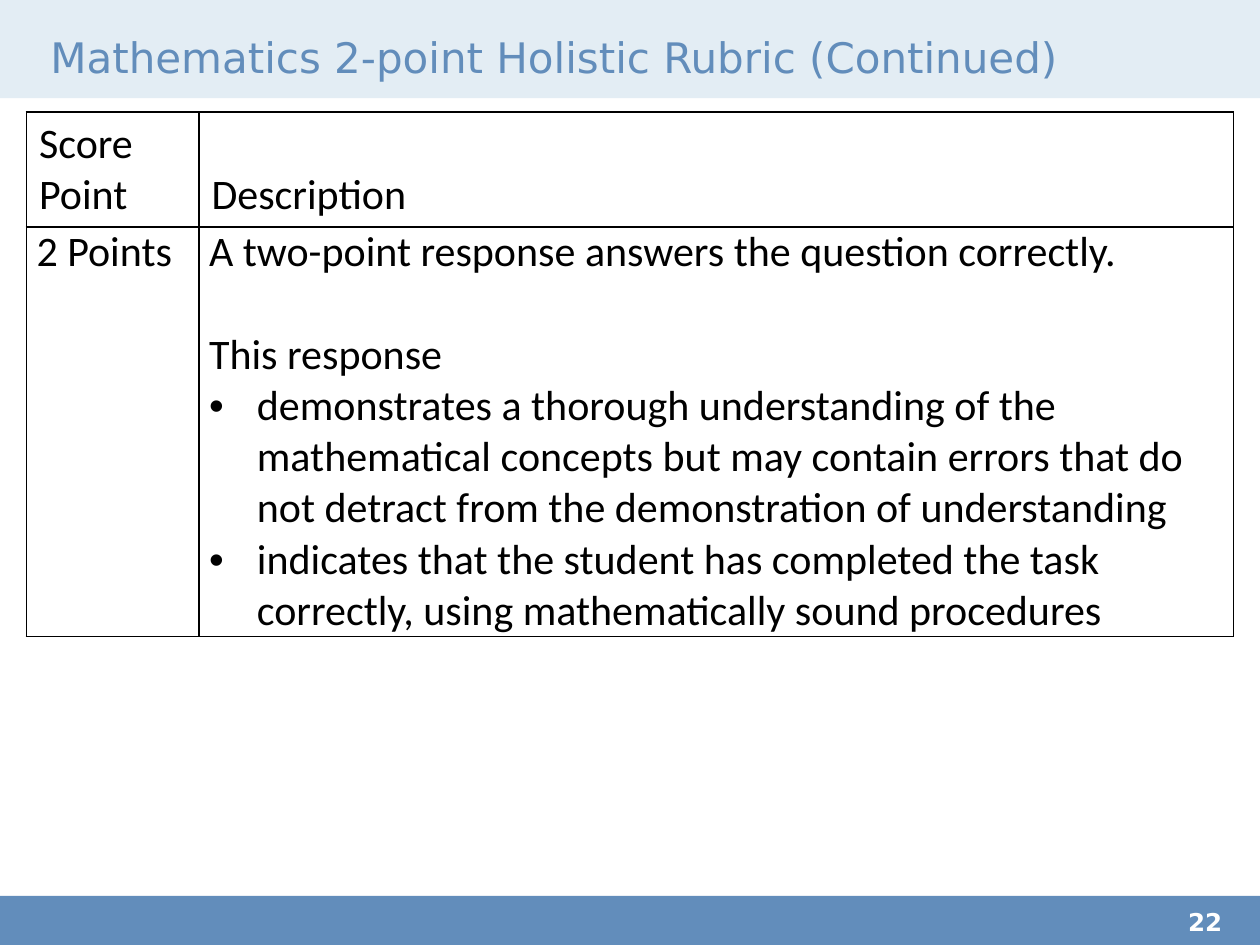
from dataclasses import dataclass

from pptx import Presentation
from pptx import util as u
from pptx.dml.color import RGBColor
from pptx.enum import shapes, text
from pptx.oxml import parse_xml
from pptx.oxml.ns import nsdecls

BLUE, PALE, WHITE, BLACK = "628DBB", "E3EDF4", "FFFFFF", "000000"
TITLE_FONT, BODY_FONT = "DejaVu Sans", "Calibri"


@dataclass
class Para:
    text: str
    before: float = 0
    after: float = 0
    bullet: bool = False


@dataclass
class Cell:
    paras: list[Para]
    header: bool = False


ROWS = [
    [Cell([Para("Score Point")], header=True),
     Cell([Para("Description")], header=True)],
    [Cell([Para("2 Points", after=6)]),
     Cell([
         Para("A two-point response answers the question correctly."),
         Para("This response", before=29.3),
         Para("demonstrates a thorough understanding of the mathematical "
              "concepts but may contain errors that do not detract from the "
              "demonstration of understanding", bullet=True),
         Para("indicates that the student has completed the task correctly, "
              "using mathematically sound procedures", bullet=True),
     ])],
]
COL_WIDTHS = [1.37, 8.21]
ROW_HEIGHTS = [0.91, 3.25]


def rgb(color: str) -> RGBColor:
    return RGBColor.from_string(color)


def write(p, content: str, *, font: str = BODY_FONT, size: float = 24,
          color: str = BLACK, bold: bool = False) -> None:
    r = p.add_run()
    r.text = content
    r.font.name, r.font.size, r.font.bold = font, u.Pt(size), bold
    r.font.color.rgb = rgb(color)


def add_band(s, top: float, height: float, color: str) -> None:
    sp = s.shapes.add_shape(shapes.MSO_SHAPE.RECTANGLE, 0, u.Inches(top),
                            u.Inches(10), u.Inches(height))
    sp.shadow.inherit = False
    sp.fill.solid()
    sp.fill.fore_color.rgb = rgb(color)
    sp.line.fill.background()


def add_label(s, content: str, box: tuple[float, ...], anchor, **fmt) -> None:
    tf = s.shapes.add_textbox(*map(u.Inches, box)).text_frame
    tf.word_wrap = True
    tf.vertical_anchor = anchor
    tf.margin_left = tf.margin_top = tf.margin_right = tf.margin_bottom = 0
    write(tf.paragraphs[0], content, **fmt)


def add_bullet(p) -> None:
    pPr = p._p.get_or_add_pPr()
    indent = u.Inches(0.38)
    pPr.set("marL", str(indent))
    pPr.set("indent", str(-indent))
    for xml in (f'<a:buFont {nsdecls("a")} typeface="Arial"/>',
                f'<a:buChar {nsdecls("a")} char="•"/>',
                f'<a:tabLst {nsdecls("a")}>'
                f'<a:tab pos="{u.Inches(0.5)}" algn="l"/></a:tabLst>'):
        pPr.append(parse_xml(xml))


def add_borders(cell, color: str, width: float) -> None:
    for side in "LRTB":
        cell._tc.get_or_add_tcPr().append(parse_xml(
            f'<a:ln{side} {nsdecls("a")} w="{u.Pt(width)}"><a:solidFill>'
            f'<a:srgbClr val="{color}"/></a:solidFill></a:ln{side}>'))


def fill_cell(cell, content: Cell) -> None:
    add_borders(cell, BLACK, 1)
    cell.fill.background()
    side, end = (0.1, 0.05) if content.header else (0.08, 0)
    cell.margin_left = cell.margin_right = u.Inches(side)
    cell.margin_top = cell.margin_bottom = u.Inches(end)
    cell.vertical_anchor = (text.MSO_ANCHOR.BOTTOM if content.header
                            else text.MSO_ANCHOR.TOP)
    tf = cell.text_frame
    for i, para in enumerate(content.paras):
        p = tf.add_paragraph() if i else tf.paragraphs[0]
        if para.bullet:
            add_bullet(p)
        p.space_before, p.space_after = u.Pt(para.before), u.Pt(para.after)
        write(p, para.text)


def add_rubric(s) -> None:
    table = s.shapes.add_table(
        len(ROWS), len(COL_WIDTHS), u.Inches(0.21), u.Inches(0.89),
        u.Inches(sum(COL_WIDTHS)), u.Inches(sum(ROW_HEIGHTS))).table
    table.first_row = table.horz_banding = False
    for col, width in zip(table.columns, COL_WIDTHS):
        col.width = u.Inches(width)
    for row, height, contents in zip(table.rows, ROW_HEIGHTS, ROWS):
        row.height = u.Inches(height)
        for cell, content in zip(row.cells, contents):
            fill_cell(cell, content)


def main() -> None:
    prs = Presentation()
    prs.slide_width, prs.slide_height = u.Inches(10), u.Inches(7.5)
    s = prs.slides.add_slide(prs.slide_layouts[6])

    # Header and footer bands
    add_band(s, 0, 0.78, PALE)
    add_band(s, 7.11, 0.39, BLUE)

    # Title
    add_label(s, "Mathematics 2-point Holistic Rubric (Continued)",
              (0.4, 0.23, 9, 0.44), text.MSO_ANCHOR.MIDDLE,
              font=TITLE_FONT, color=BLUE)

    # Rubric table
    add_rubric(s)

    # Page number
    add_label(s, "22", (9.43, 7.2, 0.57, 0.3), text.MSO_ANCHOR.TOP,
              font=TITLE_FONT, size=14, color=WHITE, bold=True)

    prs.save("out.pptx")


if __name__ == "__main__":
    main()
